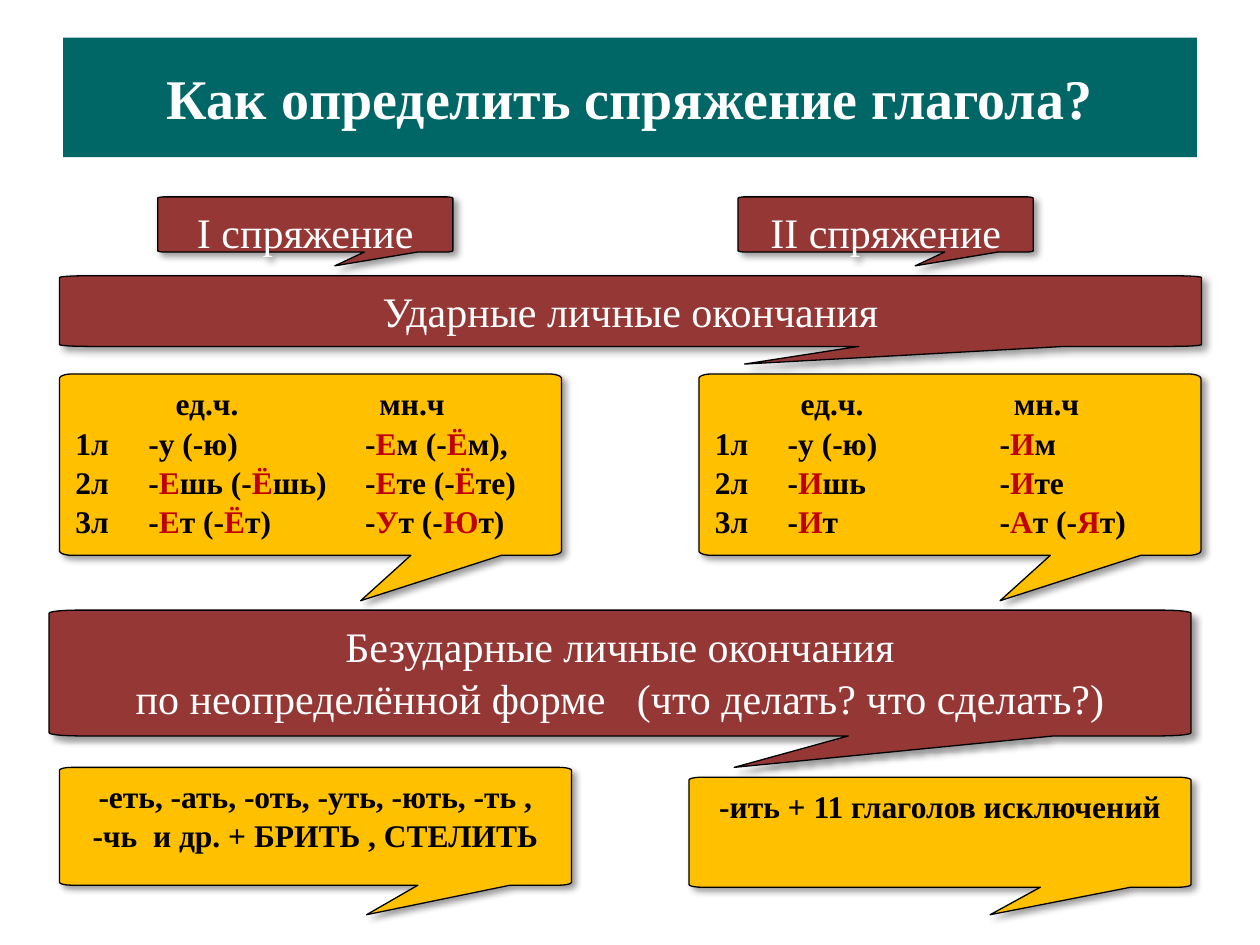
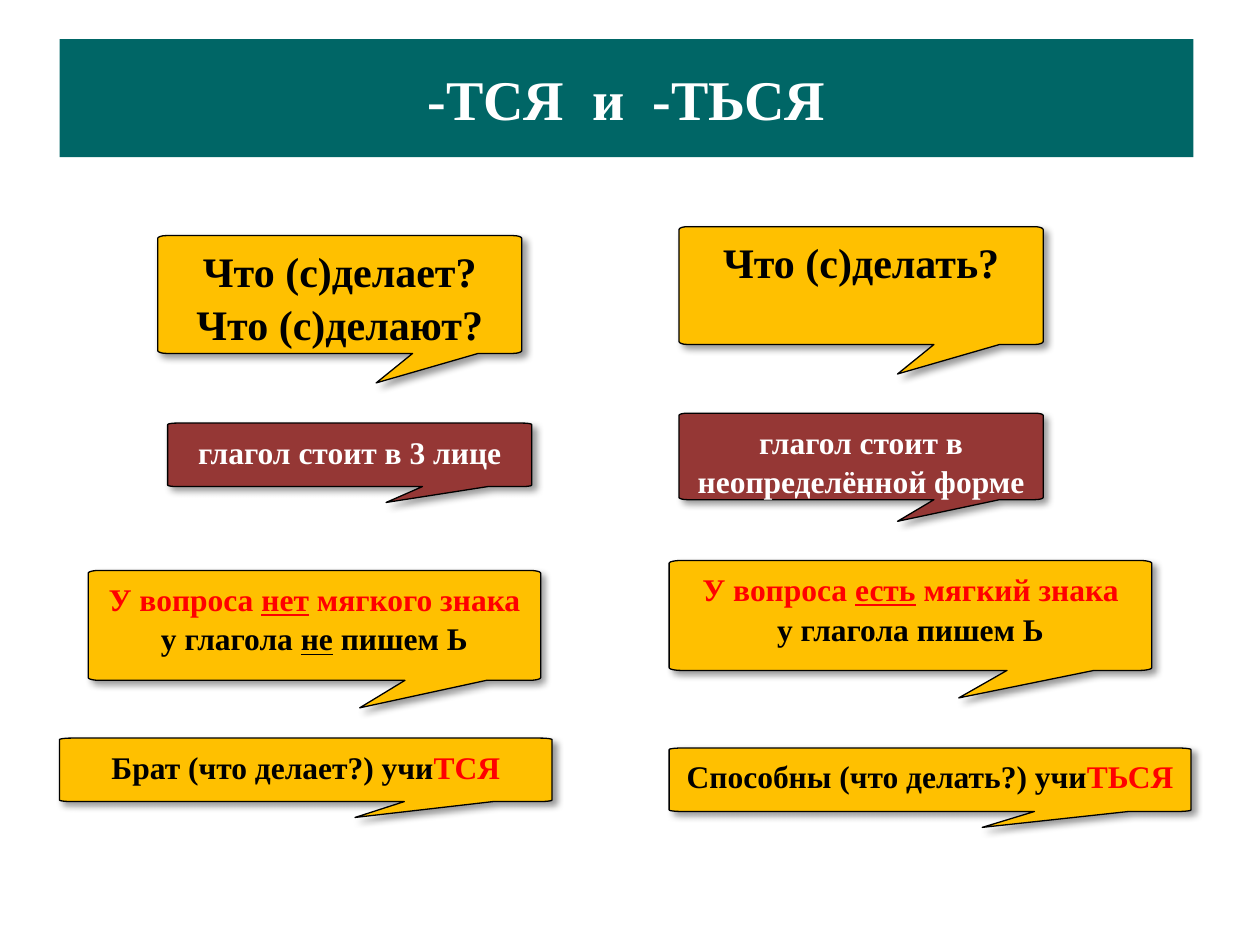
import math

import pptx
import pptx.dml.color
import pptx.enum.text
import pptx.oxml.ns
import pptx.util
from lxml import etree

Cm = pptx.util.Cm
Pt = pptx.util.Pt
RGB = pptx.dml.color.RGBColor
ALIGN = pptx.enum.text.PP_ALIGN
ANCHOR = pptx.enum.text.MSO_ANCHOR
qn = pptx.oxml.ns.qn

# Shared look
TEAL = RGB(0x00, 0x66, 0x66)
MAROON = RGB(0x95, 0x37, 0x35)
AMBER = RGB(0xFF, 0xC0, 0x00)
DARK_RED = RGB(0xC0, 0x00, 0x00)
RED = RGB(0xFF, 0x00, 0x00)
BLACK = RGB(0x00, 0x00, 0x00)
WHITE = RGB(0xFF, 0xFF, 0xFF)
FONT = "Times New Roman"

# Callout outline, as shares of its width and height
BODY = 0.8
CORNER_X, CORNER_Y = 0.025, 0.02
TAIL = [(0.88, BODY), (0.6, 1), (0.7, BODY)]


def style_paragraph(paragraph, size, bold, align):
    paragraph.alignment = align
    paragraph.font.name = FONT
    paragraph.font.size = Pt(size)
    paragraph.font.bold = bold


def add_marked_runs(paragraph, text, color, accent):
    """Text between asterisks takes the accent colour, between underscores a line."""
    for i, colored in enumerate(text.split("*")):
        for j, piece in enumerate(colored.split("_")):
            if piece:
                run = paragraph.add_run()
                run.text = piece
                run.font.color.rgb = accent if i % 2 else color
                if j % 2:
                    run.font.underline = True


def add_tab_stops(paragraph, stops):
    tabs = etree.Element(qn("a:tabLst"))
    for stop in stops:
        etree.SubElement(tabs, qn("a:tab"), pos=str(Cm(stop)), algn="l")
    properties = paragraph._p.get_or_add_pPr()
    defaults = properties.find(qn("a:defRPr"))
    defaults.addprevious(tabs)


def add_soft_shadow(shape):
    shape.shadow.inherit = False
    effects = shape._element.spPr.find(qn("a:effectLst"))
    shadow = etree.SubElement(effects, qn("a:outerShdw"), blurRad=str(Pt(4)),
                              dist=str(Pt(3)), dir="2700000", algn="tl", rotWithShape="0")
    black = etree.SubElement(shadow, qn("a:srgbClr"), val=str(BLACK))
    etree.SubElement(black, qn("a:alpha"), val="40000")


def corner(center_x, center_y, start):
    """Points of a quarter ellipse that begins at the angle start."""
    angles = [math.radians(start + step) for step in range(0, 91, 15)]
    return [(center_x + CORNER_X * math.cos(a), center_y + CORNER_Y * math.sin(a))
            for a in angles]


def callout_outline():
    left, right = CORNER_X, 1 - CORNER_X
    top, bottom = CORNER_Y, BODY - CORNER_Y
    return (corner(right, top, -90) + corner(right, bottom, 0) + TAIL
            + corner(left, bottom, 90) + corner(left, top, 180))


def add_callout(slide, box, lines, fill, size=18, bold=True, accent=RED,
                align=ALIGN.CENTER, tab_rows=()):
    left, top, width, height = box
    points = [(Cm(left + x * width), Cm(top + y * height)) for x, y in callout_outline()]
    builder = slide.shapes.build_freeform(*points[0], scale=1.0)
    builder.add_line_segments(points[1:], close=True)
    callout = builder.convert_to_shape()
    callout.fill.solid()
    callout.fill.fore_color.rgb = fill
    callout.line.color.rgb = BLACK
    callout.line.width = Pt(0.75)
    add_soft_shadow(callout)

    frame = callout.text_frame
    frame.word_wrap = True
    frame.vertical_anchor = ANCHOR.TOP
    frame.margin_left = frame.margin_right = Cm(0.25 + 0.007 * width)
    frame.margin_top = Cm(0.15 + 0.006 * height)
    text_color = WHITE if fill == MAROON else BLACK
    for i, line in enumerate(lines):
        paragraph = frame.paragraphs[0] if i == 0 else frame.add_paragraph()
        style_paragraph(paragraph, size, bold, align)
        paragraph.line_spacing = 1.04
        if tab_rows:
            add_tab_stops(paragraph, tab_rows[min(i, 1)])
        add_marked_runs(paragraph, line, text_color, accent)


def add_endings(slide, left, lines, heading_stops, ending_stops):
    add_callout(slide, (left, 7.54, 10.12, 4.57), lines, AMBER, accent=DARK_RED,
                align=ALIGN.LEFT, tab_rows=(heading_stops, ending_stops))


def add_titled_slide(deck, text, left, top, height):
    slide = deck.slides.add_slide(deck.slide_layouts[5])
    title = slide.shapes.title
    title.left, title.top = Cm(left), Cm(top)
    title.width, title.height = Cm(22.86), Cm(height)
    title.fill.solid()
    title.fill.fore_color.rgb = TEAL
    title.text_frame.text = text
    title.text_frame.vertical_anchor = ANCHOR.MIDDLE
    heading = title.text_frame.paragraphs[0]
    style_paragraph(heading, 32, True, ALIGN.CENTER)
    heading.runs[0].font.color.rgb = WHITE
    return slide


def build_conjugation(deck):
    slide = add_titled_slide(deck, "Как определить спряжение глагола?", 1.27, 0.76, 2.41)

    # Conjugation names and stressed endings
    for left, name in ((3.18, "I спряжение"), (14.88, "II спряжение")):
        add_callout(slide, (left, 3.97, 5.95, 1.39), [name], MAROON, 24, False)
    add_callout(slide, (1.2, 5.56, 23.02, 1.78), ["Ударные личные окончания"],
                MAROON, 24, False)
    add_endings(slide, 1.2, [
        "\tед.ч.\tмн.ч",
        "1л\t-у (-ю)\t-*Е*м (-*Ё*м),",
        "2л\t-*Е*шь (-*Ё*шь)\t-*Е*те (-*Ё*те)",
        "3л\t-*Е*т (-*Ё*т)\t-*У*т (-*Ю*т)",
    ], (2.02, 6.13), (1.47, 5.84))
    add_endings(slide, 14.09, [
        "\tед.ч.\tмн.ч",
        "1л\t-у (-ю)\t-*И*м",
        "2л\t-*И*шь\t-*И*те",
        "3л\t-*И*т\t-*А*т (-*Я*т)",
    ], (1.73, 6.03), (1.47, 5.74))

    # Unstressed endings
    add_callout(slide, (0.99, 12.3, 23.02, 3.17), [
        "Безударные личные окончания",
        "по неопределённой форме   (что делать? что сделать?)",
    ], MAROON, 24, False)
    add_callout(slide, (1.2, 15.47, 10.32, 2.97),
                ["-еть, -ать, -оть, -уть, -ють, -ть , -чь  и др. + БРИТЬ , СТЕЛИТЬ"], AMBER)
    add_callout(slide, (13.89, 15.67, 10.12, 2.77),
                ["-ить + 11 глаголов исключений"], AMBER)


def build_soft_sign(deck):
    slide = add_titled_slide(deck, "-ТСЯ  и  -ТЬСЯ", 1.2, 0.79, 2.38)

    # Third person
    add_callout(slide, (3.18, 4.75, 7.34, 2.97),
                ["Что (с)делает?", "Что (с)делают?"], AMBER, 24)
    add_callout(slide, (3.38, 8.53, 7.34, 1.6), ["глагол стоит в 3 лице"], MAROON)
    add_callout(slide, (1.78, 11.5, 9.12, 2.77),
                ["*У вопроса _нет_ мягкого знака*", "у глагола _не_ пишем Ь"], AMBER)
    add_callout(slide, (1.2, 14.88, 9.93, 1.6), ["Брат (что делает?) учи*ТСЯ*"], AMBER)

    # Infinitive
    add_callout(slide, (13.69, 4.57, 7.34, 2.97), ["Что (с)делать?"], AMBER, 24)
    add_callout(slide, (13.69, 8.33, 7.34, 2.18),
                ["глагол стоит в неопределённой форме"], MAROON)
    add_callout(slide, (13.49, 11.3, 9.73, 2.77),
                ["*У вопроса _есть_ мягкий знака*", "у глагола пишем Ь"], AMBER)
    add_callout(slide, (13.49, 15.08, 10.52, 1.6),
                ["Способны (что делать?) учи*ТЬСЯ*"], AMBER)


def main():
    deck = pptx.Presentation()
    deck.slide_width, deck.slide_height = Cm(25.4), Cm(19.05)
    build_conjugation(deck)
    build_soft_sign(deck)
    deck.save("out.pptx")


if __name__ == "__main__":
    main()
